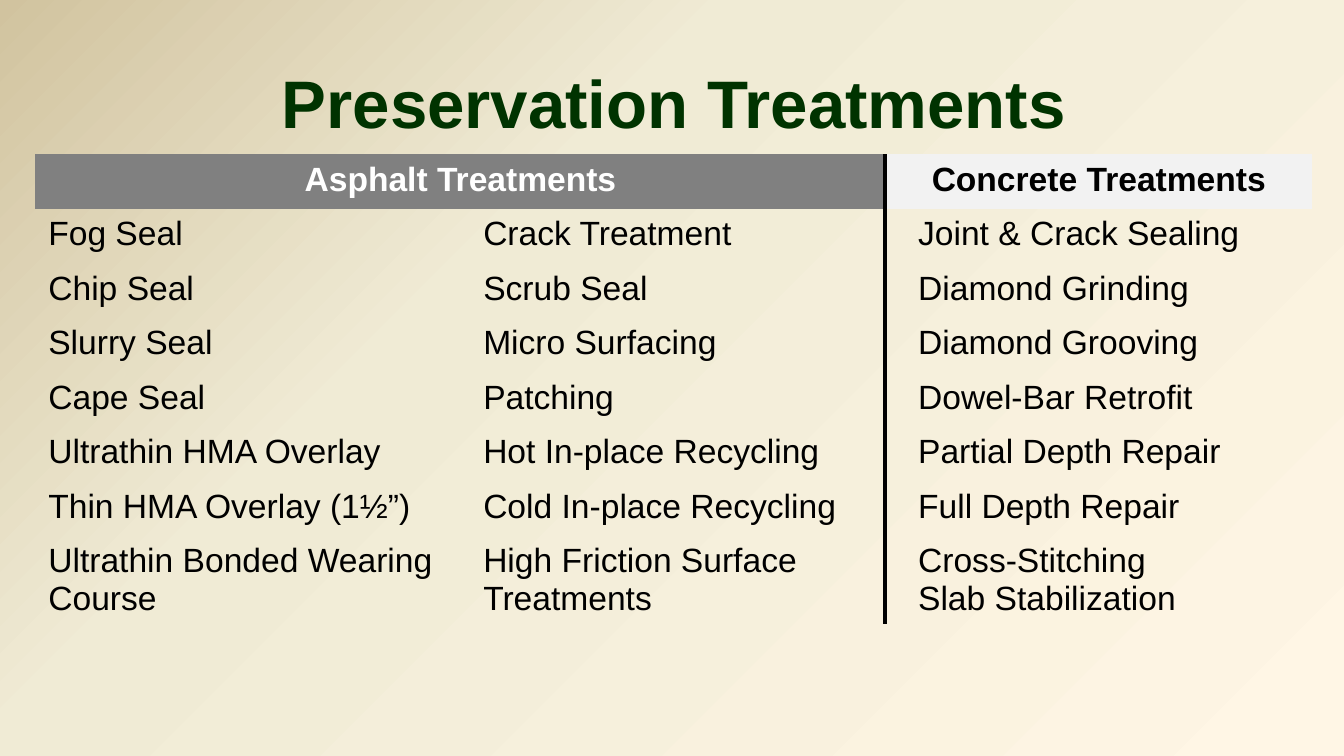
import pptx
import pptx.dml.color
import pptx.enum.shapes
import pptx.enum.text
import pptx.oxml
import pptx.oxml.ns
import pptx.util

Pt = pptx.util.Pt
RGBColor = pptx.dml.color.RGBColor
ALIGN = pptx.enum.text.PP_ALIGN
ANCHOR = pptx.enum.text.MSO_ANCHOR

DARK_GREEN = RGBColor(0x00, 0x33, 0x00)
BLACK = RGBColor(0x00, 0x00, 0x00)
WHITE = RGBColor(0xFF, 0xFF, 0xFF)
GRAY = RGBColor(0x80, 0x80, 0x80)
PALE_GRAY = RGBColor(0xF2, 0xF2, 0xF2)
CREAM = RGBColor(0xFF, 0xF6, 0xE5)
IVORY = RGBColor(0xF0, 0xEB, 0xD5)
SAND = RGBColor(0xD1, 0xC3, 0x9F)

NO_STYLE_NO_GRID = "{2D5ABB26-0587-4C30-8999-92F81FD0307C}"

HEADERS = [
    (0, "Asphalt Treatments", WHITE, GRAY),
    (2, "Concrete Treatments", BLACK, PALE_GRAY),
]
TREATMENTS = [
    ("Fog Seal", "Crack Treatment", "Joint & Crack Sealing"),
    ("Chip Seal", "Scrub Seal", "Diamond Grinding"),
    ("Slurry Seal", "Micro Surfacing", "Diamond Grooving"),
    ("Cape Seal", "Patching", "Dowel-Bar Retrofit"),
    ("Ultrathin HMA Overlay", "Hot In-place Recycling", "Partial Depth Repair"),
    ("Thin HMA Overlay (1½”)", "Cold In-place Recycling", "Full Depth Repair"),
    ("Ultrathin Bonded Wearing Course", "High Friction Surface Treatments",
     "Cross-Stitching\nSlab Stabilization"),
]


def write_text(text_frame, text, size=18, color=BLACK, bold=False, align=ALIGN.LEFT):
    """Fill the frame, one paragraph for each line of text."""
    text_frame.text = text
    for paragraph in text_frame.paragraphs:
        paragraph.alignment = align
        paragraph.font.name = "Arial"
        paragraph.font.size = Pt(size)
        paragraph.font.bold = bold
        paragraph.font.color.rgb = color


presentation = pptx.Presentation()
presentation.slide_width = Pt(720)
presentation.slide_height = Pt(405)
slide = presentation.slides.add_slide(presentation.slide_layouts[5])

# Background: radial gradient spreading from the bottom right corner
slide.background.fill.gradient()
gradient = slide.background.fill._xPr.find(pptx.oxml.ns.qn("a:gradFill"))
stops = "".join(
    f'<a:gs pos="{percent * 1000}"><a:srgbClr val="{color}"/></a:gs>'
    for percent, color in [(0, CREAM), (65, IVORY), (100, SAND)]
)
gradient.getparent().replace(gradient, pptx.oxml.parse_xml(
    f'<a:gradFill {pptx.oxml.ns.nsdecls("a")} rotWithShape="1"><a:gsLst>{stops}</a:gsLst>'
    '<a:path path="circle"><a:fillToRect l="100000" t="100000"/></a:path></a:gradFill>'
))

# Title
title = slide.shapes.title
title.left, title.top, title.width, title.height = Pt(141.8), Pt(28.8), Pt(438.5), Pt(51.1)
title.text_frame.word_wrap = False
title.text_frame.auto_size = pptx.enum.text.MSO_AUTO_SIZE.NONE
title.text_frame.vertical_anchor = ANCHOR.BOTTOM
write_text(title.text_frame, "Preservation Treatments", size=36, color=DARK_GREEN,
           bold=True, align=ALIGN.CENTER)

# Table of treatments
row_count = len(TREATMENTS) + 1
table_shape = slide.shapes.add_table(
    row_count, 3, Pt(18.7), Pt(82.6), Pt(684), Pt(29.2 * row_count))
table = table_shape.table
table.first_row = False
table.horz_banding = False
table._tbl.tblPr.find(pptx.oxml.ns.qn("a:tableStyleId")).text = NO_STYLE_NO_GRID

table.cell(0, 0).merge(table.cell(0, 1))
for column, heading, color, fill_color in HEADERS:
    cell = table.cell(0, column)
    cell.fill.solid()
    cell.fill.fore_color.rgb = fill_color
    write_text(cell.text_frame, heading, color=color, bold=True, align=ALIGN.CENTER)

for row, names in enumerate(TREATMENTS, start=1):
    for column, name in enumerate(names):
        cell = table.cell(row, column)
        cell.fill.background()
        cell.margin_left = Pt(7.2 + 5 * column)
        write_text(cell.text_frame, name)

# Divider between asphalt and concrete
divider = slide.shapes.add_connector(
    pptx.enum.shapes.MSO_CONNECTOR.STRAIGHT, Pt(474), Pt(82.6), Pt(474), Pt(334.5))
divider.line.color.rgb = BLACK
divider.line.width = Pt(2.25)
divider._element.spPr.append(pptx.oxml.parse_xml(
    f'<a:effectLst {pptx.oxml.ns.nsdecls("a")}/>'))

presentation.save("out.pptx")
